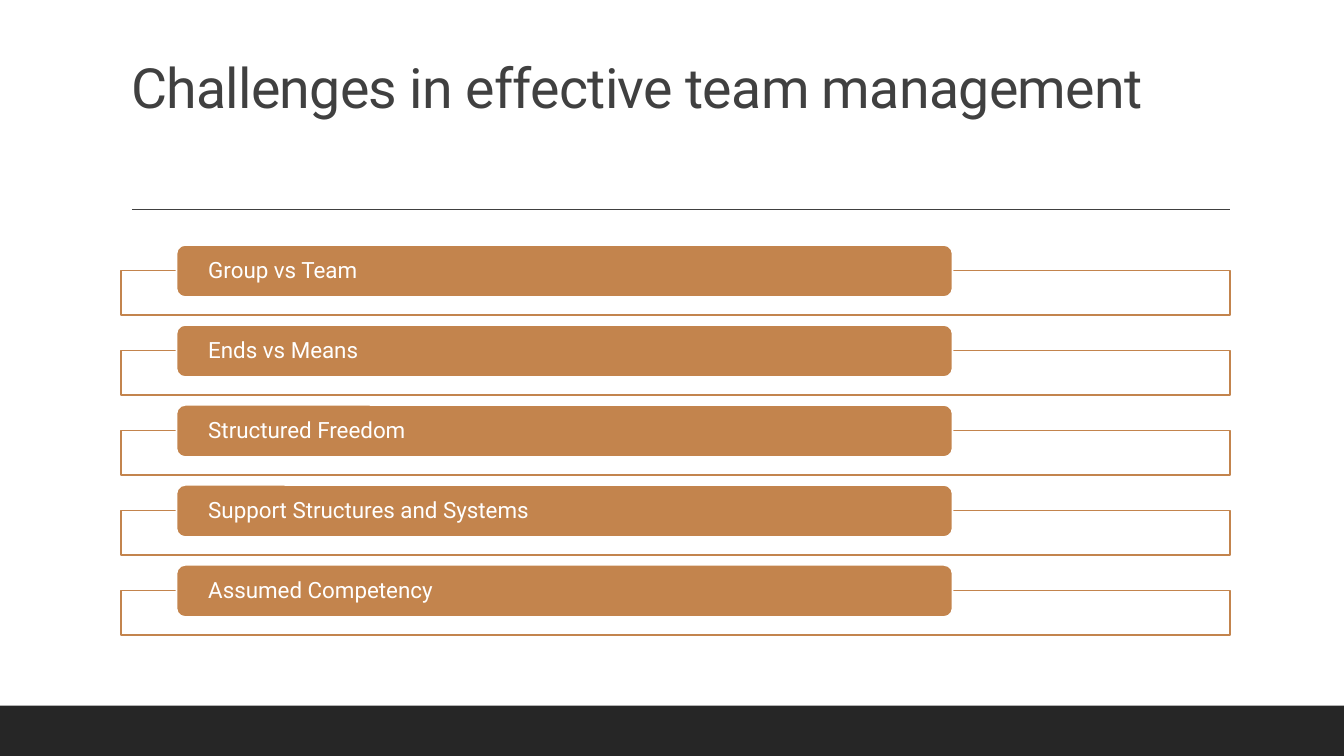
"""Build the slide on challenges in effective team management."""
from dataclasses import dataclass

from lxml.etree import SubElement
from pptx import Presentation
from pptx.dml.color import RGBColor
from pptx.enum.shapes import MSO_CONNECTOR, MSO_SHAPE
from pptx.enum.text import MSO_ANCHOR, MSO_AUTO_SIZE, PP_ALIGN
from pptx.oxml.ns import qn
from pptx.presentation import Presentation as Deck
from pptx.shapes.autoshape import Shape
from pptx.slide import Slide
from pptx.text.text import TextFrame
from pptx.util import Inches, Pt

WIDTH, HEIGHT = Inches(13.333), Inches(7.5)


@dataclass(frozen=True)
class Theme:
    """Colours, font and sizes used across the slide."""
    font: str = "Roboto"
    ink: RGBColor = RGBColor(0x40, 0x40, 0x40)
    footer: RGBColor = RGBColor(0x26, 0x26, 0x26)
    accent: RGBColor = RGBColor(0xC3, 0x84, 0x4D)
    paper: RGBColor = RGBColor(0xFF, 0xFF, 0xFF)
    title_size: float = 39.6
    item_size: float = 16
    outline: float = 1.25
    rule: float = 1


@dataclass(frozen=True)
class Box:
    """A rectangle in percent of the slide's width and height."""
    left: float
    top: float
    width: float
    height: float

    def emu(self) -> tuple[int, int, int, int]:
        """Return left, top, width and height in EMU."""
        return (x_at(self.left), y_at(self.top),
                x_at(self.width), y_at(self.height))


@dataclass(frozen=True)
class Challenge:
    """One labelled row of the list."""
    label: str
    row: int

    def bar(self) -> Box:
        """Return the place of the filled label."""
        return Box(13.13, FIRST_ROW + self.row * ROW_STEP, 57.75, 6.89)

    def frame(self) -> Box:
        """Return the place of the outlined box behind the label."""
        return Box(9, FIRST_ROW + self.row * ROW_STEP + 3.4, 82.5, 5.9)


THEME = Theme()
FIRST_ROW, ROW_STEP = 32.4, 10.58
LABELS = ("Group vs Team", "Ends vs Means", "Structured Freedom",
          "Support Structures and Systems", "Assumed Competency")
CHALLENGES = [Challenge(label, row) for row, label in enumerate(LABELS)]


def x_at(percent: float) -> int:
    """Turn a percentage of the slide's width into EMU."""
    return round(WIDTH * percent / 100)


def y_at(percent: float) -> int:
    """Turn a percentage of the slide's height into EMU."""
    return round(HEIGHT * percent / 100)


def add_box(s: Slide, kind: MSO_SHAPE, box: Box, fill: RGBColor,
            line: RGBColor | None = None) -> Shape:
    """Add a flat filled shape with an optional outline."""
    sp = s.shapes.add_shape(kind, *box.emu())
    sp.shadow.inherit = False
    sp.fill.solid()
    sp.fill.fore_color.rgb = fill
    if line is None:
        sp.line.fill.background()
    else:
        sp.line.color.rgb = line
        sp.line.width = Pt(THEME.outline)
    return sp


def write(tf: TextFrame, text: str, size: float, color: RGBColor,
          spacing: float = 0) -> None:
    """Write one left-aligned run with letter spacing in points."""
    tf.word_wrap = True
    tf.auto_size = MSO_AUTO_SIZE.NONE
    p = tf.paragraphs[0]
    p.alignment = PP_ALIGN.LEFT
    p.line_spacing = 0.9
    r = p.add_run()
    r.text = text
    r.font.name = THEME.font
    r.font.size = Pt(size)
    r.font.color.rgb = color
    r.font._element.set("spc", str(round(spacing * 100)))


def add_title(s: Slide, text: str) -> None:
    """Place and fill the title placeholder."""
    sp = s.shapes.title
    sp.left, sp.top, sp.width, sp.height = Box(9, 4.13, 82.5, 21.2).emu()
    tf = sp.text_frame
    tf.vertical_anchor = MSO_ANCHOR.BOTTOM
    tf.margin_bottom = Inches(0.7)
    write(tf, text, THEME.title_size, THEME.ink, -0.5)


def add_rule(s: Slide) -> None:
    """Draw the thin line under the title."""
    line = s.shapes.add_connector(MSO_CONNECTOR.STRAIGHT, x_at(9.82),
                                  y_at(27.7), x_at(91.55), y_at(27.7))
    line.line.color.rgb = THEME.ink
    line.line.width = Pt(THEME.rule)
    SubElement(line._element.spPr, qn("a:effectLst"))


def add_challenge(s: Slide, challenge: Challenge) -> None:
    """Draw one row: a translucent frame under a labelled bar."""
    frame = add_box(s, MSO_SHAPE.RECTANGLE, challenge.frame(),
                    THEME.paper, THEME.accent)
    color = frame._element.spPr.find(qn("a:solidFill"))[0]
    SubElement(color, qn("a:alpha"), val="90000")
    bar = add_box(s, MSO_SHAPE.ROUNDED_RECTANGLE, challenge.bar(),
                  THEME.accent, THEME.paper)
    tf = bar.text_frame
    tf.vertical_anchor = MSO_ANCHOR.MIDDLE
    tf.margin_left = tf.margin_right = Inches(0.29)
    tf.margin_top = tf.margin_bottom = 0
    write(tf, challenge.label, THEME.item_size, THEME.paper)


def build() -> Deck:
    """Build the presentation with its single slide."""
    prs = Presentation()
    prs.slide_width, prs.slide_height = WIDTH, HEIGHT
    s = prs.slides.add_slide(prs.slide_layouts[5])
    add_box(s, MSO_SHAPE.RECTANGLE, Box(0, 93.33, 100, 6.67), THEME.footer)
    add_rule(s)
    add_title(s, "Challenges in effective team management")
    for challenge in CHALLENGES:
        add_challenge(s, challenge)
    return prs


if __name__ == "__main__":
    build().save("out.pptx")
